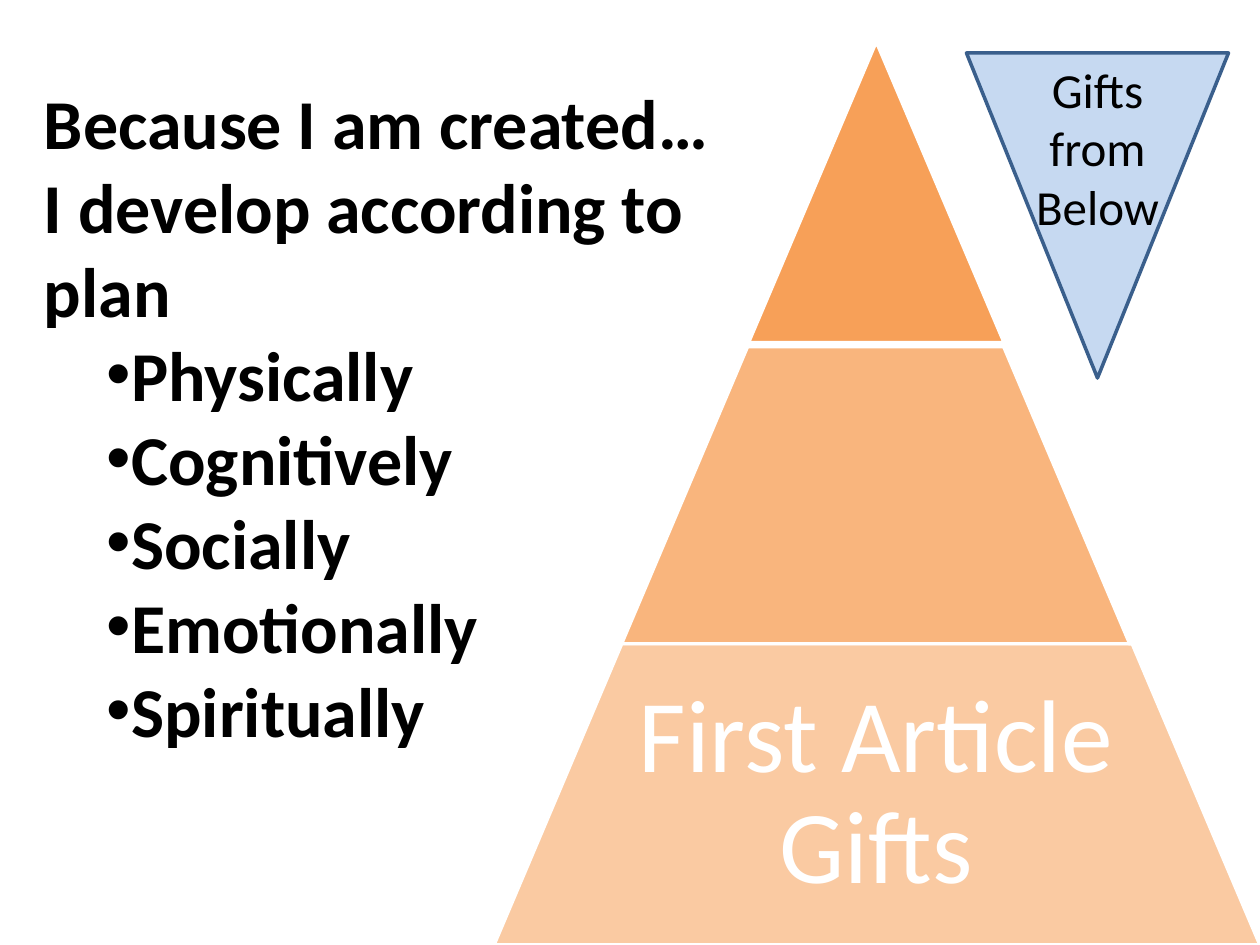
import pptx
import pptx.util
import pptx.dml.color
import pptx.enum.shapes
import pptx.enum.text
import pptx.oxml.ns
import lxml.etree

Inches = pptx.util.Inches
Pt = pptx.util.Pt
Auto = pptx.enum.text.MSO_AUTO_SIZE
Align = pptx.enum.text.PP_ALIGN
Kind = pptx.enum.shapes.MSO_SHAPE
qn = pptx.oxml.ns.qn

COLORS = {"tier": "F79646", "white": "FFFFFF", "black": "000000",
          "blue": "C6D9F1", "edge": "3A5F8C"}


def color(name):
    return pptx.dml.color.RGBColor.from_string(COLORS[name])


def write(par, text, size, name="black", bold=False):
    run = par.add_run()
    run.text = text
    run.font.name = "Calibri"
    run.font.size = Pt(size)
    run.font.bold = bold
    run.font.color.rgb = color(name)


prs = pptx.Presentation()
prs.slide_width, prs.slide_height = Inches(10), Inches(7.5)
slide = prs.slides.add_slide(prs.slide_layouts[6])

# Pyramid: left, top, width, slant, opacity of each tier
group = slide.shapes.add_group_shape()
tiers = [(5.94, 0.33, 2.03, 0.5, 90),
         (4.92, 2.75, 4.06, 0.424, 70),
         (3.92, 5.11, 6.08, 0.424, 50)]
for left, top, width, slant, alpha in tiers:
    tier = group.shapes.add_shape(Kind.TRAPEZOID, Inches(left), Inches(top),
                                  Inches(width), Inches(2.39))
    tier.adjustments[0] = slant
    tier.shadow.inherit = False
    tier.fill.solid()
    tier.fill.fore_color.rgb = color("tier")
    fill = tier.fill._xPr.find(qn("a:solidFill"))[0]
    lxml.etree.SubElement(fill, qn("a:alpha"), val=str(alpha * 1000))
    tier.line.color.rgb = color("white")
    tier.line.width = Pt(2)

label = group.shapes.add_textbox(Inches(4.98), Inches(5.11), Inches(3.95), Inches(2.39))
frame = label.text_frame
frame.word_wrap = True
frame.vertical_anchor = pptx.enum.text.MSO_ANCHOR.MIDDLE
frame.margin_left = frame.margin_right = Inches(0.08)
frame.margin_top = frame.margin_bottom = Inches(0.08)
par = frame.paragraphs[0]
par.alignment = Align.CENTER
par.line_spacing = 0.9
write(par, "First Article Gifts", 59, "white")

# Inverted triangle and its caption
tri = slide.shapes.add_shape(Kind.ISOSCELES_TRIANGLE, Inches(7.67), Inches(0.42),
                             Inches(2.08), Inches(2.58))
tri.rotation = 180
tri.shadow.inherit = False
tri.fill.solid()
tri.fill.fore_color.rgb = color("blue")
tri.line.color.rgb = color("edge")
tri.line.width = Pt(2)

note = slide.shapes.add_textbox(Inches(8), Inches(0.42), Inches(1.42), Inches(1.51))
frame = note.text_frame
frame.word_wrap = True
frame.auto_size = Auto.SHAPE_TO_FIT_TEXT
par = frame.paragraphs[0]
par.alignment = Align.CENTER
write(par, "Gifts from Below", 28)

# Main text
body = slide.shapes.add_textbox(Inches(0.25), Inches(0.58), Inches(5.58), Inches(5.49))
frame = body.text_frame
frame.word_wrap = True
frame.auto_size = Auto.SHAPE_TO_FIT_TEXT
intro = ["Because I am created…", "I develop according to plan"]
areas = ["Physically", "Cognitively", "Socially", "Emotionally", "Spiritually"]
for i, text in enumerate(intro + areas):
    par = frame.add_paragraph() if i else frame.paragraphs[0]
    write(par, text, 40, bold=True)
    if text in areas:
        par.level = 1
        props = par._p.get_or_add_pPr()
        props.set("marL", str(Inches(0.5)))
        props.set("indent", "0")
        lxml.etree.SubElement(props, qn("a:buFont"), typeface="Arial")
        lxml.etree.SubElement(props, qn("a:buChar"), char="•")

prs.save("out.pptx")
